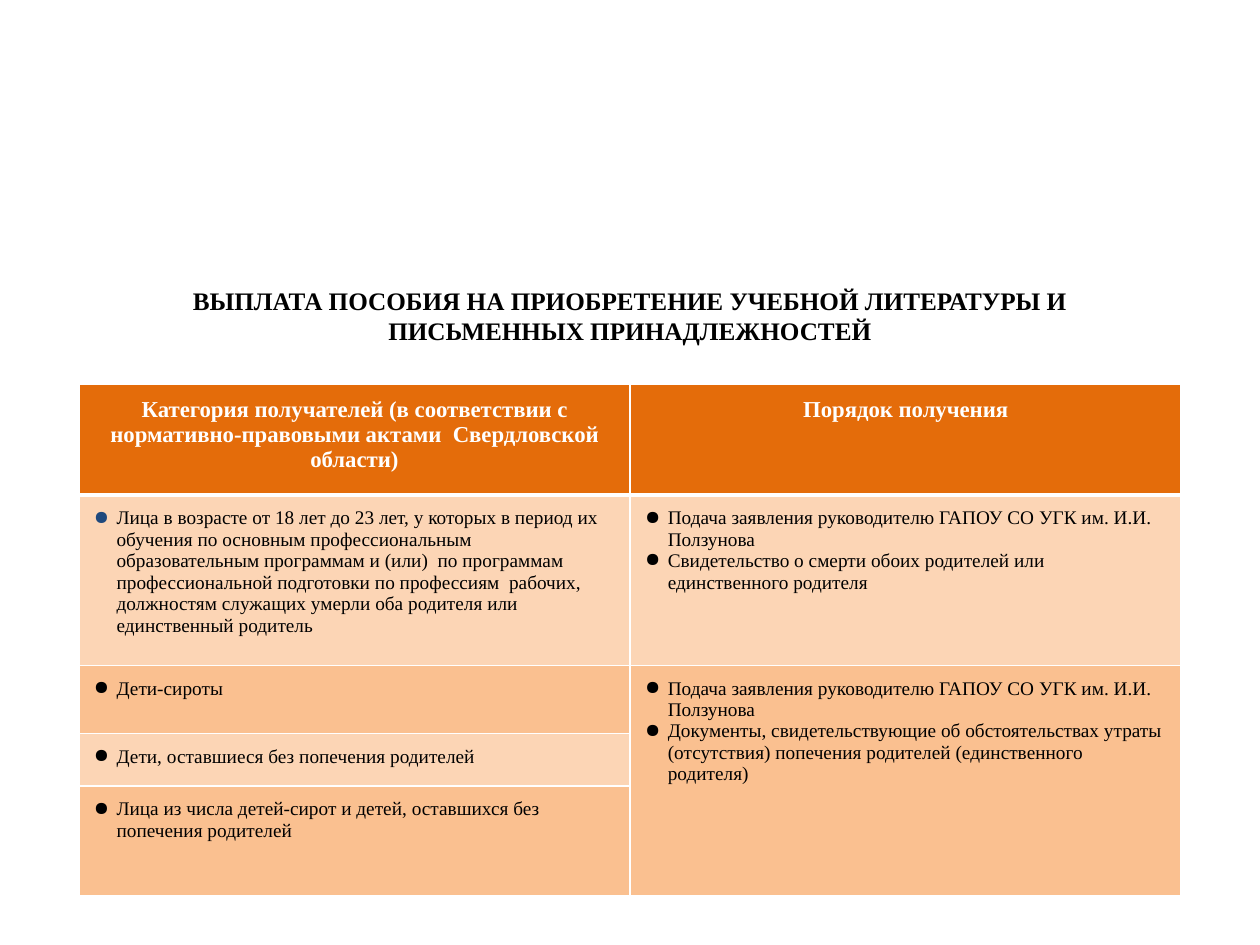
from dataclasses import dataclass
from typing import Sequence

from lxml.etree import SubElement
from pptx import Presentation
from pptx.dml.color import RGBColor as Color
from pptx.enum.text import MSO_ANCHOR as Anchor, PP_ALIGN as Align
from pptx.oxml.ns import qn
from pptx.util import Inches, Pt


@dataclass(frozen=True)
class Theme:
    font: str = "Times New Roman"
    ink: str = "000000"
    paper: str = "FFFFFF"
    accent: str = "1F497D"
    header: str = "E46C0A"
    bands: tuple[str, str] = ("FCD5B5", "FAC090")
    title_size: float = 14.4
    header_size: float = 13
    body_size: float = 11
    title_leading: float = 17.1
    rule: float = 1
    header_rule: float = 3
    padding: float = 0.1
    indent: float = 0.2
    hanging: float = 0.18


@dataclass(frozen=True)
class Entry:
    row: int
    column: int
    lines: tuple[str, ...]
    row_span: int = 1
    bullet_color: str = "000000"


THEME = Theme()
WIDTH, HEIGHT = 10, 7.5
ROWS = (0.88, 1.35, 0.54, 0.42, 0.87)
COLUMNS = (4.375, 4.375)
APPLICATION = "Подача заявления руководителю ГАПОУ СО УГК им. И.И. Ползунова"
TITLE = "ВЫПЛАТА ПОСОБИЯ НА ПРИОБРЕТЕНИЕ УЧЕБНОЙ ЛИТЕРАТУРЫ И ПИСЬМЕННЫХ ПРИНАДЛЕЖНОСТЕЙ"
HEADINGS = (
    "Категория получателей (в соответствии с нормативно-правовыми актами  Свердловской области)",
    "Порядок получения",
)
ENTRIES = (
    Entry(1, 0, (
        "Лица в возрасте от 18 лет до 23 лет, у которых в период их обучения по основным "
        "профессиональным образовательным программам и (или)  по программам профессиональной "
        "подготовки по профессиям  рабочих, должностям служащих умерли оба родителя или "
        "единственный родитель",
    ), bullet_color=THEME.accent),
    Entry(1, 1, (APPLICATION, "Свидетельство о смерти обоих родителей или единственного родителя")),
    Entry(2, 0, ("Дети-сироты",)),
    Entry(2, 1, (
        APPLICATION,
        "Документы, свидетельствующие об обстоятельствах утраты (отсутствия) попечения "
        "родителей (единственного родителя)",
    ), row_span=3),
    Entry(3, 0, ("Дети, оставшиеся без попечения родителей",)),
    Entry(4, 0, ("Лица из числа детей-сирот и детей, оставшихся без попечения родителей",)),
)


def add_bullet(para, color: str) -> None:
    properties = para._p.get_or_add_pPr()
    properties.set("marL", str(Inches(THEME.indent)))
    properties.set("indent", str(-Inches(THEME.hanging)))
    bullet_color = SubElement(properties, qn("a:buClr"))
    SubElement(bullet_color, qn("a:srgbClr"), val=color)
    SubElement(properties, qn("a:buChar"), char="●")


def write(frame, lines: Sequence[str], *, size: float, color: str = THEME.ink,
          bold: bool = False, align: Align = Align.LEFT,
          leading: float | None = None, bullet: str | None = None) -> None:
    frame.word_wrap = True
    for index, line in enumerate(lines):
        para = frame.paragraphs[0] if index == 0 else frame.add_paragraph()
        para.alignment = align
        if leading:
            para.line_spacing = Pt(leading)
        if bullet:
            add_bullet(para, bullet)
        span = para.add_run()
        span.text = line
        span.font.name = THEME.font
        span.font.size = Pt(size)
        span.font.bold = bold
        span.font.color.rgb = Color.from_string(color)


def style_cell(cell, row: int) -> None:
    cell.margin_left = cell.margin_right = Inches(THEME.padding)
    cell.margin_top = cell.margin_bottom = Inches(THEME.padding)
    cell.vertical_anchor = Anchor.TOP
    top = THEME.header_rule if row == 1 else THEME.rule
    bottom = THEME.header_rule if row == 0 else THEME.rule
    properties = cell._tc.get_or_add_tcPr()
    for side, width in (("L", THEME.rule), ("R", THEME.rule), ("T", top), ("B", bottom)):
        border = SubElement(properties, qn(f"a:ln{side}"), w=str(Pt(width)))
        fill = SubElement(border, qn("a:solidFill"))
        SubElement(fill, qn("a:srgbClr"), val=THEME.paper)
    cell.fill.solid()
    color = THEME.header if row == 0 else THEME.bands[(row - 1) % 2]
    cell.fill.fore_color.rgb = Color.from_string(color)


def add_title(page) -> None:
    box = page.shapes.add_textbox(
        Inches(0.075 * WIDTH), Inches(2.19), Inches(0.85 * WIDTH), Inches(0.86))
    frame = box.text_frame
    frame.vertical_anchor = Anchor.MIDDLE
    frame.margin_bottom = Inches(0.28)
    write(frame, (TITLE,), size=THEME.title_size, bold=True, align=Align.CENTER,
          leading=THEME.title_leading)


def add_benefits(page) -> None:
    width = sum(COLUMNS)
    table = page.shapes.add_table(
        len(ROWS), len(COLUMNS), Inches((WIDTH - width) / 2), Inches(3.05),
        Inches(width), Inches(sum(ROWS))).table
    for column, size in zip(table.columns, COLUMNS):
        column.width = Inches(size)
    for index, size in enumerate(ROWS):
        table.rows[index].height = Inches(size)
        for cell in table.rows[index].cells:
            style_cell(cell, index)
    for column, heading in enumerate(HEADINGS):
        write(table.cell(0, column).text_frame, (heading,), size=THEME.header_size,
              color=THEME.paper, bold=True, align=Align.CENTER)
    for entry in ENTRIES:
        cell = table.cell(entry.row, entry.column)
        if entry.row_span > 1:
            cell.merge(table.cell(entry.row + entry.row_span - 1, entry.column))
        write(cell.text_frame, entry.lines, size=THEME.body_size, bullet=entry.bullet_color)


def main() -> None:
    deck = Presentation()
    deck.slide_width, deck.slide_height = Inches(WIDTH), Inches(HEIGHT)
    page = deck.slides.add_slide(deck.slide_layouts[6])
    add_title(page)
    add_benefits(page)
    deck.save("out.pptx")


if __name__ == "__main__":
    main()
